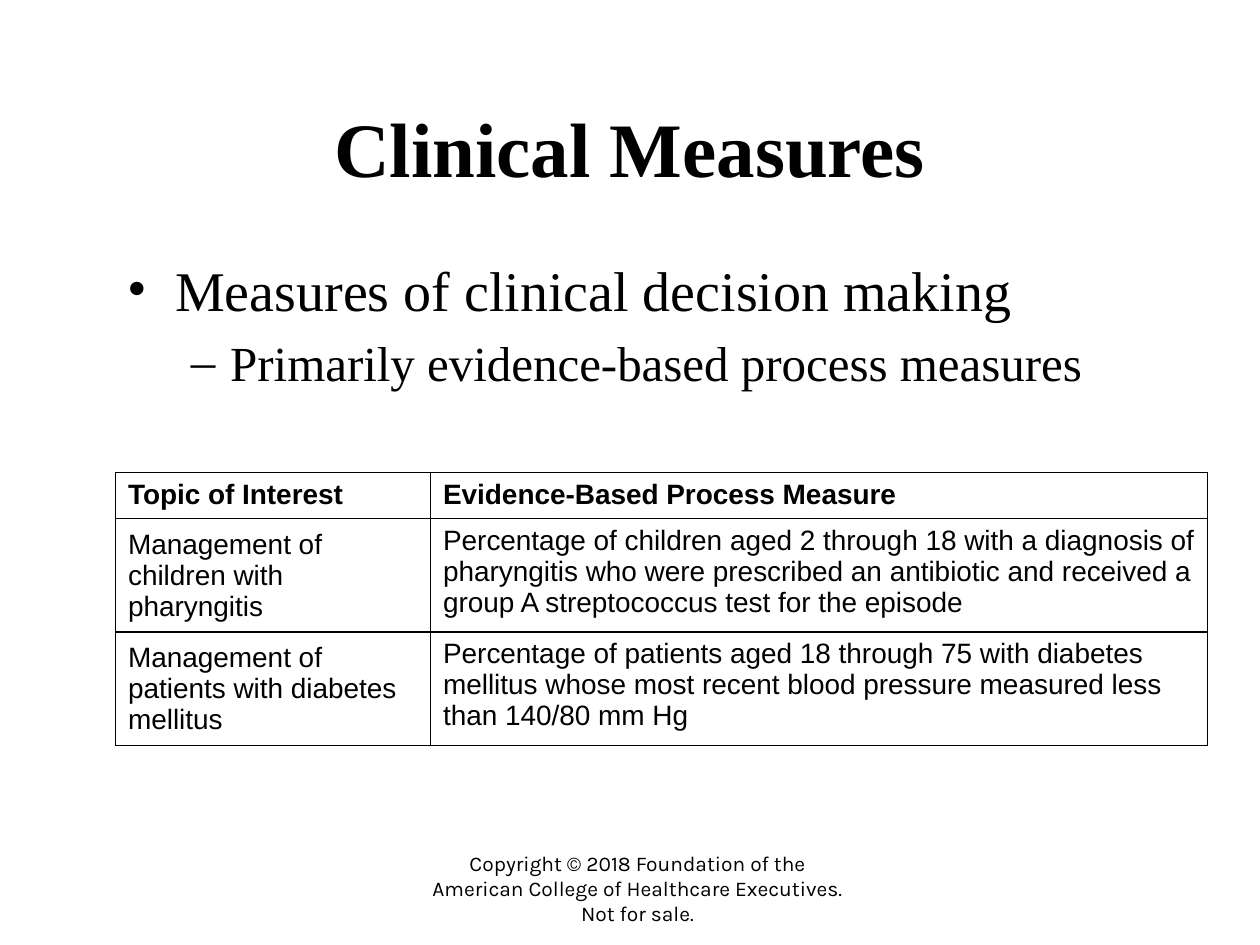
from dataclasses import dataclass

from lxml.etree import SubElement
from pptx import Presentation
from pptx.dml.color import RGBColor
from pptx.enum.text import MSO_ANCHOR as Anchor, PP_ALIGN as Align
from pptx.oxml.ns import qn
from pptx.slide import Slide
from pptx.table import _Cell as Cell
from pptx.text.text import TextFrame, _Paragraph as Paragraph
from pptx.util import Pt

COLORS = {"ink": "000000", "background": "FFFFFF"}
SERIF = "Times New Roman"


@dataclass
class CenteredText:
    text: str
    left: float
    top: float
    width: float
    height: float
    font: str
    size: float
    bold: bool = False


@dataclass
class Bullet:
    text: str
    level: int
    symbol: str
    margin: float
    hanging: float
    size: float
    space_before: float


CENTERED_TEXTS = [
    CenteredText(
        "Copyright © 2018 Foundation of the American College of "
        "Healthcare Executives. Not for sale.",
        237.6, 493.2, 253.4, 28.8, "Karla", 12,
    ),
    CenteredText("Clinical Measures", 72, 54, 576, 60, SERIF, 44, True),
]
BULLETS = [
    Bullet("Measures of clinical decision making", 0, "•", 27, 27, 32, 0),
    Bullet("Primarily evidence-based process measures", 1, "–", 58.5, 22.5, 28, 5.6),
]
TABLE_ROWS = [
    ("Topic of Interest", "Evidence-Based Process Measure"),
    (
        "Management of children with pharyngitis",
        "Percentage of children aged 2 through 18 with a diagnosis of pharyngitis "
        "who were prescribed an antibiotic and received a group A streptococcus "
        "test for the episode",
    ),
    (
        "Management of patients with diabetes mellitus",
        "Percentage of patients aged 18 through 75 with diabetes mellitus whose "
        "most recent blood pressure measured less than 140/80 mm Hg",
    ),
]
COLUMN_WIDTHS = [180, 444]
ROW_HEIGHTS = [25, 60.5, 60.5]


def format_runs(paragraph: Paragraph, font: str, size: float, bold: bool = False) -> None:
    for run in paragraph.runs:
        run.font.name = font
        run.font.size = Pt(size)
        run.font.bold = bold
        run.font.color.rgb = RGBColor.from_string(COLORS["ink"])


def add_text_frame(slide: Slide, left: float, top: float, width: float, height: float) -> TextFrame:
    shape = slide.shapes.add_textbox(Pt(left), Pt(top), Pt(width), Pt(height))
    shape.text_frame.word_wrap = True
    return shape.text_frame


def add_centered_text(slide: Slide, item: CenteredText) -> None:
    text_frame = add_text_frame(slide, item.left, item.top, item.width, item.height)
    text_frame.vertical_anchor = Anchor.MIDDLE
    text_frame.text = item.text
    paragraph = text_frame.paragraphs[0]
    paragraph.alignment = Align.CENTER
    format_runs(paragraph, item.font, item.size, item.bold)


def add_bullets(slide: Slide, bullets: list[Bullet]) -> None:
    text_frame = add_text_frame(slide, 66, 138, 618, 114)
    text_frame.margin_top = Pt(8)
    text_frame.text = "\n".join(bullet.text for bullet in bullets)
    for paragraph, bullet in zip(text_frame.paragraphs, bullets):
        paragraph.level = bullet.level
        paragraph.space_before = Pt(bullet.space_before)
        properties = paragraph._p.get_or_add_pPr()
        properties.set("marL", str(Pt(bullet.margin)))
        properties.set("indent", str(-Pt(bullet.hanging)))
        SubElement(properties, qn("a:buFont"), typeface=SERIF)
        SubElement(properties, qn("a:buChar"), char=bullet.symbol)
        format_runs(paragraph, SERIF, bullet.size)


def add_borders(cell: Cell) -> None:
    properties = cell._tc.get_or_add_tcPr()
    for side in ("L", "R", "T", "B"):
        line = SubElement(properties, qn(f"a:ln{side}"), w=str(Pt(1)))
        fill = SubElement(line, qn("a:solidFill"))
        SubElement(fill, qn("a:srgbClr"), val=COLORS["ink"])


def add_measures_table(slide: Slide) -> None:
    table = slide.shapes.add_table(
        len(TABLE_ROWS), len(COLUMN_WIDTHS), Pt(66), Pt(270),
        Pt(sum(COLUMN_WIDTHS)), Pt(sum(ROW_HEIGHTS)),
    ).table
    table.first_row = False
    table.horz_banding = False
    for column, width in zip(table.columns, COLUMN_WIDTHS):
        column.width = Pt(width)
    for row_index, texts in enumerate(TABLE_ROWS):
        table.rows[row_index].height = Pt(ROW_HEIGHTS[row_index])
        for column_index, text in enumerate(texts):
            cell = table.cell(row_index, column_index)
            cell.text_frame.text = text
            is_header = row_index == 0
            is_topic = column_index == 0 and not is_header
            cell.vertical_anchor = Anchor.MIDDLE if is_topic else Anchor.TOP
            format_runs(cell.text_frame.paragraphs[0], "Arial", 16, is_header)
            add_borders(cell)
            cell.fill.background()


def main() -> None:
    presentation = Presentation()
    presentation.slide_width = Pt(720)
    presentation.slide_height = Pt(540)
    slide = presentation.slides.add_slide(presentation.slide_layouts[6])
    slide.background.fill.solid()
    slide.background.fill.fore_color.rgb = RGBColor.from_string(COLORS["background"])
    for item in CENTERED_TEXTS:
        add_centered_text(slide, item)
    add_bullets(slide, BULLETS)
    add_measures_table(slide)
    presentation.save("out.pptx")


if __name__ == "__main__":
    main()
